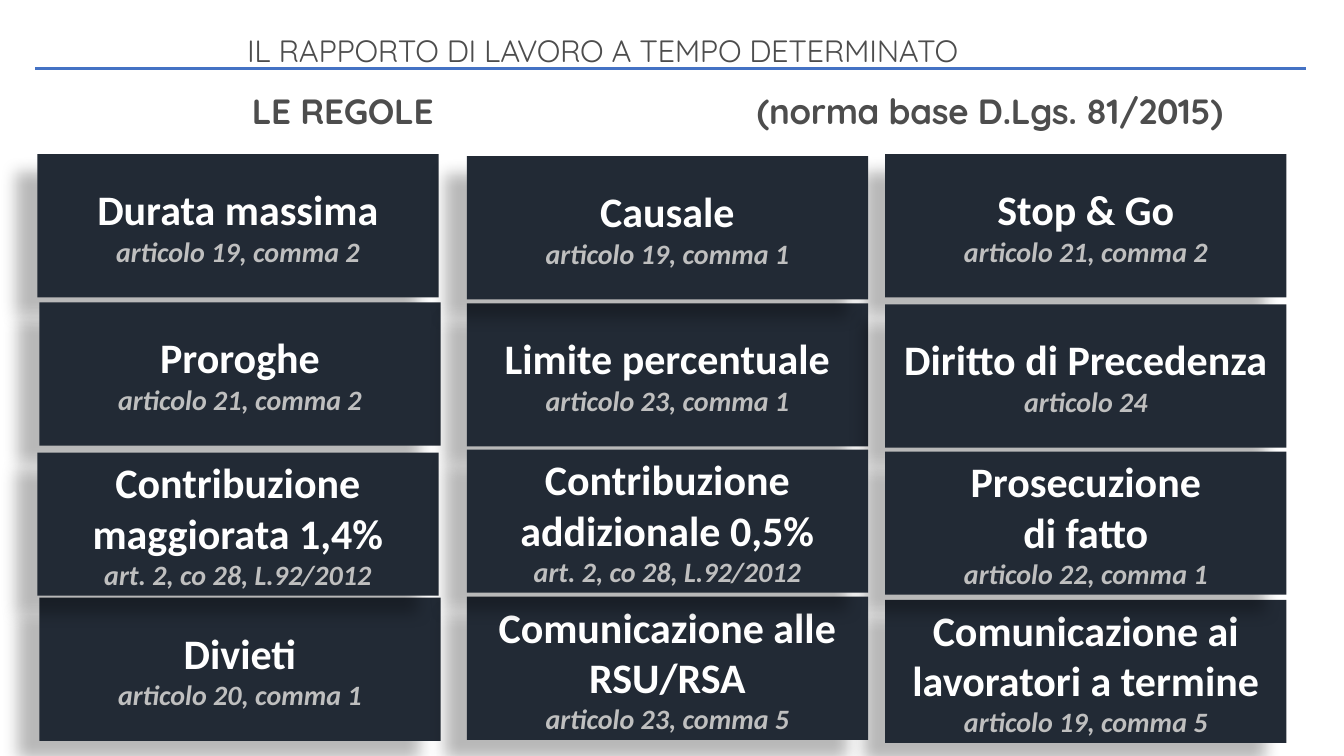
from dataclasses import dataclass

from lxml.etree import SubElement
from pptx import Presentation
from pptx.dml.color import RGBColor
from pptx.enum.shapes import MSO_CONNECTOR, MSO_SHAPE
from pptx.enum.text import MSO_ANCHOR, PP_ALIGN
from pptx.oxml.ns import qn
from pptx.util import Inches, Pt


@dataclass(frozen=True)
class Theme:
    heading_font: str = "Quicksand"
    card_font: str = "Calibri"
    heading: str = "4D4D4D"
    rule: str = "4472C4"
    card: str = "222A35"
    card_title: str = "FFFFFF"
    card_article: str = "BFBFBF"
    shadow: str = "000000"
    title_size: float = 22
    subtitle_size: float = 25
    card_title_size: float = 30
    article_size: float = 20


class SlideBuilder:
    def __init__(self, s, theme):
        self.s = s
        self.theme = theme

    def run(self, p, text, font, size, color, bold=False, italic=False):
        r = p.add_run()
        r.text = text
        r.font.name = font
        r.font.size = Pt(size)
        r.font.bold = bold
        r.font.italic = italic
        r.font.color.rgb = RGBColor.from_string(color)
        return r

    def heading(self, sp, box, text, size, bold=False, tab=None):
        sp.left, sp.top, sp.width, sp.height = map(Inches, box)
        tf = sp.text_frame
        tf.word_wrap = True
        tf.vertical_anchor = MSO_ANCHOR.TOP
        p = tf.paragraphs[0]
        p.alignment = PP_ALIGN.LEFT
        p.line_spacing = 0.9
        p.space_before = Pt(0)
        if tab:
            tabs = SubElement(p._p.get_or_add_pPr(), qn("a:tabLst"))
            SubElement(tabs, qn("a:tab"), pos=str(Inches(tab)), algn="l")
        r = self.run(p, text, self.theme.heading_font, size,
                     self.theme.heading, bold)
        r.font._element.set("spc", "-20")

    def title(self, box, text):
        self.heading(self.s.shapes.title, box, text, self.theme.title_size)

    def subtitle(self, box, text, tab):
        sp = self.s.shapes.add_textbox(*map(Inches, box))
        self.heading(sp, box, text, self.theme.subtitle_size, True, tab)

    def rule(self, x1, x2, y):
        line = self.s.shapes.add_connector(
            MSO_CONNECTOR.STRAIGHT, Inches(x1), Inches(y), Inches(x2), Inches(y))
        line.line.color.rgb = RGBColor.from_string(self.theme.rule)
        line.line.width = Pt(2.25)
        SubElement(line._element.spPr, qn("a:effectLst"))

    def shadow(self, sp):
        sp.shadow.inherit = False
        effects = sp._element.spPr.find(qn("a:effectLst"))
        outer = SubElement(effects, qn("a:outerShdw"), blurRad=str(Pt(11.8)),
                           dist=str(Pt(19.7)), dir=str(141 * 60000),
                           algn="ctr", rotWithShape="0")
        color = SubElement(outer, qn("a:srgbClr"), val=self.theme.shadow)
        SubElement(color, qn("a:alpha"), val="28000")

    def card(self, x, y, titles, article):
        t = self.theme
        sp = self.s.shapes.add_shape(MSO_SHAPE.RECTANGLE, Inches(x), Inches(y),
                                     Inches(3.98), Inches(1.42))
        sp.fill.solid()
        sp.fill.fore_color.rgb = RGBColor.from_string(t.card)
        sp.line.fill.background()
        self.shadow(sp)
        tf = sp.text_frame
        tf.word_wrap = True
        tf.vertical_anchor = MSO_ANCHOR.MIDDLE
        lines = [(text, t.card_title_size, t.card_title, False) for text in titles]
        lines.append((article, t.article_size, t.card_article, True))
        for i, (text, size, color, italic) in enumerate(lines):
            p = tf.add_paragraph() if i else tf.paragraphs[0]
            p.alignment = PP_ALIGN.CENTER
            self.run(p, text, t.card_font, size, color, True, italic)


# Cards from back to front: left, top, title lines, article
CARDS = [
    (0.37, 1.53, ["Durata massima"], "articolo 19, comma 2"),
    (0.39, 3.00, ["Proroghe"], "articolo 21, comma 2"),
    (8.78, 1.53, ["Stop & Go"], "articolo 21, comma 2"),
    (4.63, 3.01, ["Limite percentuale"], "articolo 23, comma 1"),
    (0.39, 5.93, ["Divieti"], "articolo 20, comma 1"),
    (8.78, 3.02, ["Diritto di Precedenza"], "articolo 24"),
    (0.37, 4.49, ["Contribuzione maggiorata 1,4%"], "art. 2, co 28, L.92/2012"),
    (8.78, 5.95, ["Comunicazione ai lavoratori a termine"], "articolo 19, comma 5"),
    (4.63, 1.55, ["Causale"], "articolo 19, comma 1"),
    (8.78, 4.48, ["Prosecuzione", "di fatto"], "articolo 22, comma 1"),
    (4.63, 5.92, ["Comunicazione alle RSU/RSA"], "articolo 23, comma 5"),
    (4.63, 4.46, ["Contribuzione addizionale 0,5%"], "art. 2, co 28, L.92/2012"),
]


def main():
    prs = Presentation()
    prs.slide_width = Inches(13.33)
    prs.slide_height = Inches(7.5)
    s = prs.slides.add_slide(prs.slide_layouts[5])
    b = SlideBuilder(s, Theme())

    # Heading and rule
    b.rule(0.35, 12.95, 0.68)
    b.title((2.35, 0.31, 8.64, 0.33), "IL RAPPORTO DI LAVORO A TEMPO DETERMINATO")

    # Rules of the fixed-term contract
    for card in CARDS:
        b.card(*card)

    # Subtitle with the base law at a tab stop
    b.subtitle((2.4, 0.89, 10.16, 0.33),
               "LE REGOLE\t(norma base D.Lgs. 81/2015)", 5.01)

    prs.save("out.pptx")


if __name__ == "__main__":
    main()
